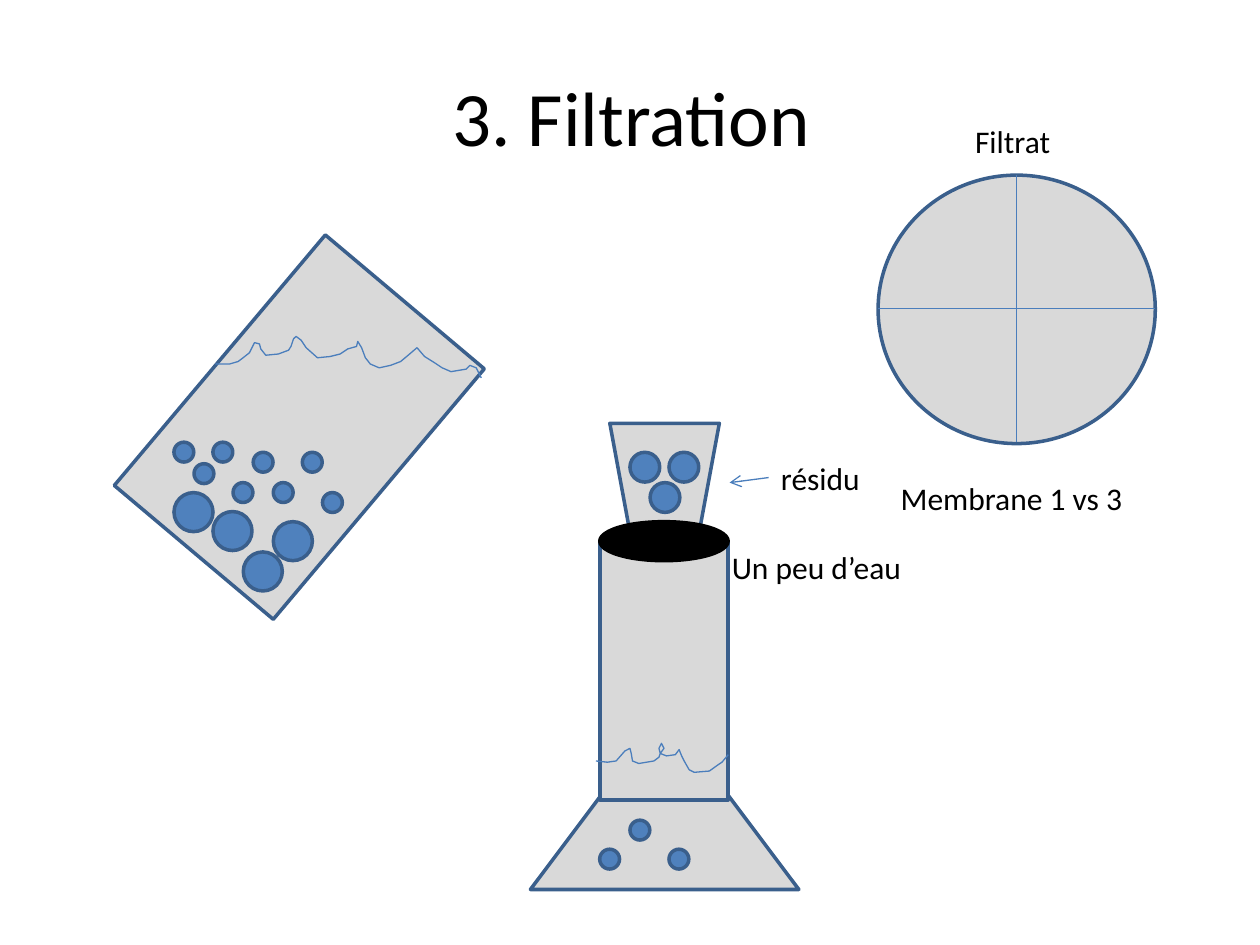
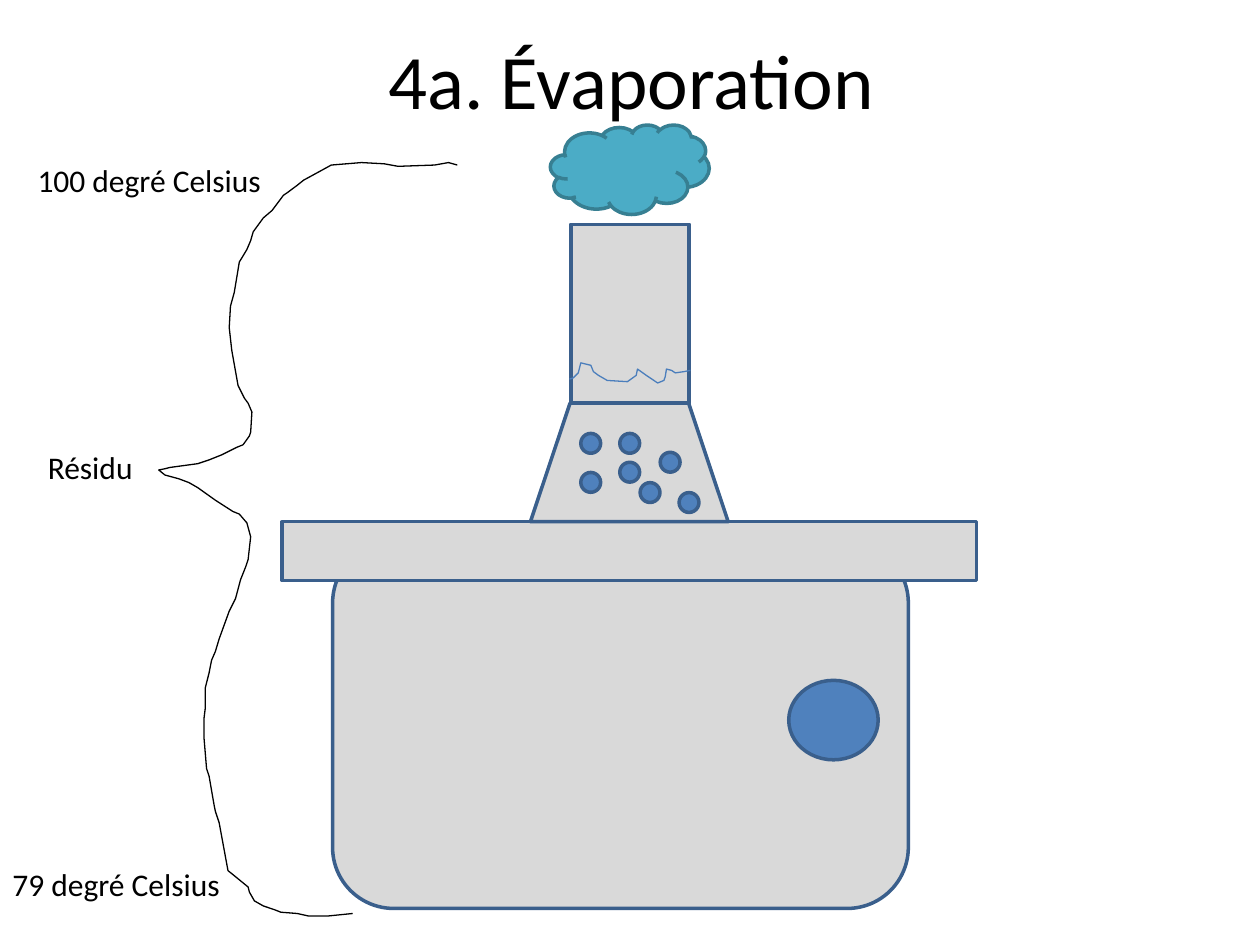
from dataclasses import dataclass

from lxml import etree
from pptx import Presentation
from pptx.dml.color import RGBColor
from pptx.enum.shapes import MSO_CONNECTOR, MSO_SHAPE
from pptx.enum.text import MSO_ANCHOR, PP_ALIGN
from pptx.oxml.ns import qn
from pptx.util import Pt

OVAL = MSO_SHAPE.OVAL
RECTANGLE = MSO_SHAPE.RECTANGLE
ROUNDED = MSO_SHAPE.ROUNDED_RECTANGLE
TRIANGLE = MSO_SHAPE.ISOSCELES_TRIANGLE
FUNNEL = MSO_SHAPE.FLOWCHART_MANUAL_OPERATION
CLOUD = MSO_SHAPE.CLOUD
STRAIGHT = MSO_CONNECTOR.STRAIGHT
CENTER = PP_ALIGN.CENTER
LEFT = PP_ALIGN.LEFT
MIDDLE = MSO_ANCHOR.MIDDLE
TOP = MSO_ANCHOR.TOP


@dataclass(frozen=True)
class Theme:
    font: str = "Calibri"
    title_size: float = 44
    label_size: float = 18
    outline_width: float = 2
    thin_width: float = 0.75
    black: RGBColor = RGBColor(0, 0, 0)
    glass: RGBColor = RGBColor(0xD9, 0xD9, 0xD9)
    outline: RGBColor = RGBColor(0x3A, 0x5F, 0x8C)
    particle: RGBColor = RGBColor(0x4F, 0x81, 0xBD)
    thin_line: RGBColor = RGBColor(0x4B, 0x7E, 0xBC)
    steam: RGBColor = RGBColor(0x4B, 0xAC, 0xC6)
    steam_outline: RGBColor = RGBColor(0x37, 0x7F, 0x92)


theme = Theme()
SMALL, MEDIUM, LARGE = 11.34, 17.01, 22.3


def add_figure(slide, kind, left, top, width, height,
               fill=theme.glass, outline=theme.outline, rotation=0):
    shape = slide.shapes.add_shape(kind, Pt(left), Pt(top), Pt(width), Pt(height))
    shape.shadow.inherit = False
    shape.fill.solid()
    shape.fill.fore_color.rgb = fill
    shape.line.color.rgb = outline
    shape.line.width = Pt(theme.outline_width)
    shape.rotation = rotation


def add_text(slide, text, left, top, width, height=28.8,
             size=theme.label_size, align=LEFT, anchor=TOP):
    box = slide.shapes.add_textbox(Pt(left), Pt(top), Pt(width), Pt(height))
    text_frame = box.text_frame
    text_frame.word_wrap = True
    text_frame.vertical_anchor = anchor
    text_frame.text = text
    paragraph = text_frame.paragraphs[0]
    paragraph.alignment = align
    font = paragraph.runs[0].font
    font.name = theme.font
    font.size = Pt(size)
    font.color.rgb = theme.black


presentation = Presentation()
presentation.slide_width = Pt(720)
presentation.slide_height = Pt(540)
blank_layout = presentation.slide_layouts[6]
filtration = presentation.slides.add_slide(blank_layout)
evaporation = presentation.slides.add_slide(blank_layout)

# Titles
for slide, title, top in ((filtration, "3. Filtration", 20.9),
                          (evaporation, "4a. Évaporation", 0)):
    add_text(slide, title, 36.7, top, 648, 90, theme.title_size, CENTER, MIDDLE)

# Filtration: funnel, membrane, tilted beaker and flask
add_figure(filtration, FUNNEL, 348.5, 241.9, 62.6, 67.7)
add_figure(filtration, OVAL, 501.8, 100.1, 158.4, 153.4)
add_figure(filtration, RECTANGLE, 111.6, 150.5, 118.8, 187.2, rotation=40.1)
add_figure(filtration, TRIANGLE, 303.1, 406.1, 153.4, 102.2)
add_figure(filtration, RECTANGLE, 342.7, 309.6, 73.4, 147.6)
add_figure(filtration, OVAL, 342.7, 298.1, 73.4, 22.3, theme.black, theme.black)

# Evaporation: hot plate, knob, flask and steam
add_figure(evaporation, ROUNDED, 190.1, 309.6, 329, 209.5)
add_figure(evaporation, RECTANGLE, 161.3, 298.1, 396.7, 33.8)
add_figure(evaporation, OVAL, 450.7, 388.8, 51.1, 45.4, theme.particle)
add_figure(evaporation, FUNNEL, 303.1, 230.4, 113, 67.7, rotation=180)
add_figure(evaporation, RECTANGLE, 326.2, 128.2, 67.7, 102.2)
add_figure(evaporation, CLOUD, 314.6, 71.3, 90.7, 51.1, theme.steam, theme.steam_outline)

# Particles
beaker_large = [(99.4, 281.5), (121.7, 292.3), (156.2, 298.1), (139, 315.4)]
beaker_small = [(99.4, 252.7), (110.9, 265), (121.7, 252.7), (133.2, 275.8),
                (144.7, 258.5), (156.2, 275.8), (172.8, 258.5), (184.3, 281.5)]
funnel_residue = [(360, 258.5), (382.3, 258.5), (371.5, 275.8)]
flask_small = [(342.7, 485.3), (360, 468.7), (382.3, 485.3)]
heated_small = [(331.9, 247.7), (331.9, 270), (354.2, 264.2), (354.2, 247.7),
                (365.8, 275.8), (377.3, 258.5), (388.1, 281.5)]
for slide, diameter, places in (
    (filtration, LARGE, beaker_large),
    (filtration, SMALL, beaker_small),
    (filtration, MEDIUM, funnel_residue),
    (filtration, SMALL, flask_small),
    (evaporation, SMALL, heated_small),
):
    for left, top in places:
        add_figure(slide, OVAL, left, top, diameter, diameter, theme.particle)

# Membrane cross and residue arrow
for start_x, start_y, end_x, end_y, has_arrow in (
    (581, 100.1, 581, 252.7, False),
    (501.8, 176.4, 660.2, 176.4, False),
    (439.2, 272.9, 416.9, 275.8, True),
):
    connector = filtration.shapes.add_connector(
        STRAIGHT, Pt(start_x), Pt(start_y), Pt(end_x), Pt(end_y))
    connector.line.color.rgb = theme.thin_line
    connector.line.width = Pt(theme.thin_width)
    properties = connector.element.spPr
    if has_arrow:
        etree.SubElement(properties.find(qn("a:ln")), qn("a:tailEnd"), type="arrow")
    etree.SubElement(properties, qn("a:effectLst"))

# Hand-drawn lines, in steps of 0.72 pt
beaker_water = [
    (171, 289), (182, 289), (189, 287), (193, 284), (198, 280), (202, 272), (206, 273),
    (207, 277), (211, 282), (221, 281), (229, 278), (231, 275), (233, 269), (235, 267),
    (239, 270), (243, 276), (252, 284), (262, 283), (270, 281), (276, 277), (283, 275),
    (284, 271), (287, 276), (290, 284), (294, 289), (301, 292), (310, 290), (318, 287),
    (324, 282), (331, 276), (337, 283), (345, 288), (351, 292), (358, 295), (370, 293),
    (373, 290), (378, 292), (382, 300),
]
flask_water = [
    (473, 604), (482, 605), (489, 604), (496, 596), (500, 594), (501, 598), (502, 604),
    (507, 606), (519, 604), (523, 601), (524, 598), (527, 594), (525, 590), (523, 594),
    (524, 598), (529, 600), (536, 599), (539, 595), (541, 600), (543, 604), (547, 611),
    (551, 613), (563, 612), (570, 607), (573, 605), (578, 599),
]
heated_water = [
    (452, 301), (455, 300), (459, 296), (460, 292), (461, 288), (469, 290), (471, 295),
    (475, 298), (482, 302), (498, 303), (505, 298), (506, 293), (513, 298), (522, 304),
    (527, 302), (528, 299), (529, 293), (533, 294), (536, 296), (543, 295), (548, 294),
]
temperature_brace = [
    (363, 131), (356, 129), (345, 131), (316, 132), (305, 130), (287, 129), (263, 131),
    (252, 137), (241, 143), (236, 147), (228, 153), (225, 155), (216, 167), (209, 173),
    (201, 184), (199, 191), (196, 198), (190, 208), (186, 232), (183, 243), (182, 260),
    (184, 278), (189, 306), (194, 316), (197, 320), (200, 327), (199, 343), (198, 346),
    (193, 353), (188, 355), (176, 361), (166, 365), (157, 368), (135, 371), (131, 372),
    (126, 373), (131, 377), (142, 380), (150, 383), (157, 387), (171, 397), (185, 406),
    (190, 408), (196, 415), (199, 426), (197, 444), (195, 450), (191, 460), (187, 475),
    (182, 485), (174, 507), (171, 517), (168, 524), (166, 534), (163, 546), (163, 562),
    (162, 570), (162, 586), (164, 610), (166, 616), (170, 639), (171, 644), (174, 653),
    (181, 691), (186, 695), (197, 704), (198, 708), (202, 715), (209, 719), (218, 722),
    (223, 724), (236, 725), (245, 727), (260, 727), (280, 725),
]
for slide, color, points in (
    (filtration, theme.thin_line, beaker_water),
    (filtration, theme.thin_line, flask_water),
    (evaporation, theme.thin_line, heated_water),
    (evaporation, theme.black, temperature_brace),
):
    builder = slide.shapes.build_freeform(*points[0], scale=Pt(0.72))
    builder.add_line_segments(points[1:], close=False)
    shape = builder.convert_to_shape()
    shape.shadow.inherit = False
    shape.fill.background()
    shape.line.color.rgb = color
    shape.line.width = Pt(theme.thin_width)

# Labels
for slide, text, left, top, width in (
    (filtration, "Un peu d’eau", 411.1, 309.6, 169.9),
    (filtration, "résidu", 439.2, 258.5, 169.9),
    (filtration, "Filtrat", 550.1, 66.2, 169.9),
    (filtration, "Membrane 1 vs 3", 507.6, 270, 169.9),
    (evaporation, "Résidu", 20.2, 252.7, 70.6),
    (evaporation, "100 degré Celsius", 14.4, 88.6, 175.7),
    (evaporation, "79 degré Celsius", 0, 491, 144.7),
):
    add_text(slide, text, left, top, width)

presentation.save("out.pptx")
